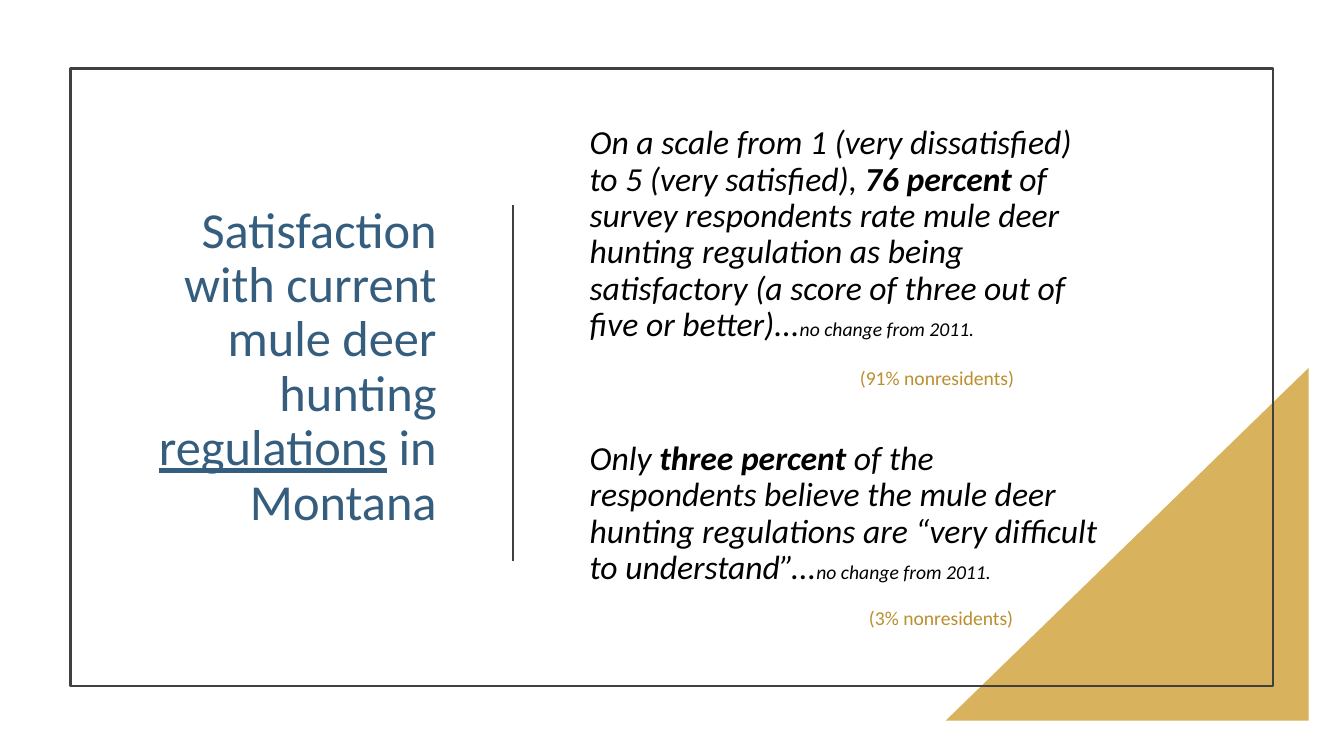
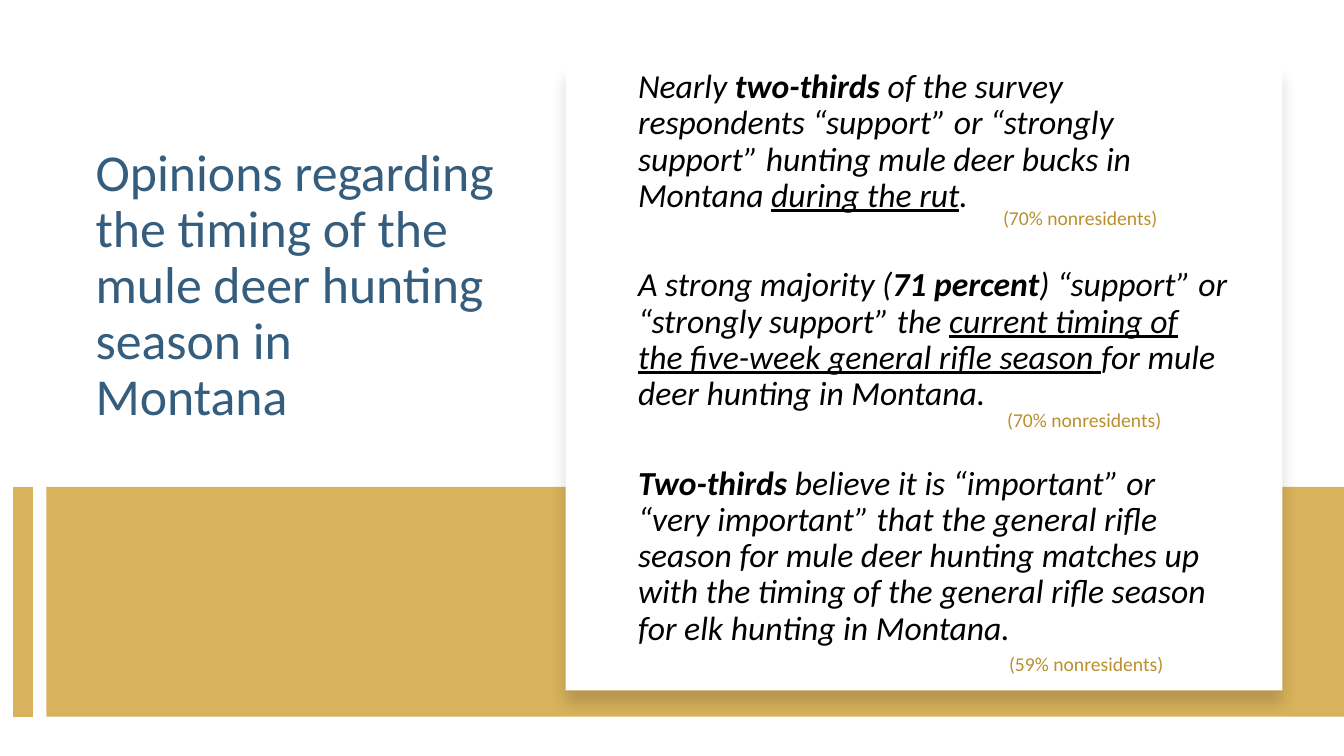
from lxml.etree import SubElement
from pptx import Presentation
from pptx.dml.color import RGBColor
from pptx.enum.shapes import MSO_CONNECTOR, MSO_SHAPE
from pptx.enum.text import MSO_ANCHOR, PP_ALIGN
from pptx.oxml.ns import qn
from pptx.util import Emu, Pt

PX = 9144  # 100 px to the inch
FONT = "Calibri"
BLUE, GOLD, DARK_GOLD = "355D7E", "D8B25C", "BA8F2D"
GREY, BLACK, WHITE = "404040", "000000", "FFFFFF"
BOLD, UNDERLINE, SMALL = {"bold": True}, {"underline": True}, {"size": 14}


def px(length):
    return Emu(length * PX)


def color(hex_text):
    return RGBColor.from_string(hex_text)


def add_text(page, area, paragraphs, size=24, ink=BLACK, italic=False,
             align=PP_ALIGN.LEFT, anchor=MSO_ANCHOR.TOP, spacing=0.9, gap=0):
    """Each paragraph is a list of plain strings and (string, format) spans."""
    frame = page.shapes.add_textbox(*map(px, area)).text_frame
    frame.word_wrap = True
    frame.vertical_anchor = anchor
    for index, spans in enumerate(paragraphs):
        para = frame.paragraphs[0] if index == 0 else frame.add_paragraph()
        para.alignment = align
        para.line_spacing = spacing
        if index < len(paragraphs) - 1:
            para.space_after = Pt(gap)
        for span in spans:
            text, style = (span, {}) if isinstance(span, str) else span
            run = para.add_run()
            run.text = text
            run.font.name = FONT
            run.font.size = Pt(style.get("size", size))
            run.font.color.rgb = color(ink)
            run.font.italic = italic
            run.font.bold = style.get("bold", False)
            run.font.underline = style.get("underline", False)


def add_title(page, area, spans, **style):
    add_text(page, area, [spans], ink=BLUE, **style)


def add_findings(page, area, paragraphs, gap):
    add_text(page, area, paragraphs, italic=True, gap=gap)


def add_nonresidents(page, left, top, percent):
    add_text(page, (left, top, 207, 34), [[f"({percent}% nonresidents)"]],
             size=14, ink=DARK_GOLD, spacing=1.0)


def add_panel(page, kind, area, fill=None, line=None):
    panel = page.shapes.add_shape(kind, *map(px, area))
    panel.shadow.inherit = False
    if fill:
        panel.fill.solid()
        panel.fill.fore_color.rgb = color(fill)
    else:
        panel.fill.background()
    if line:
        panel.line.color.rgb = color(line)
        panel.line.width = Pt(1.5)
    else:
        panel.line.fill.background()
    return panel


def add_vertical_line(page, x, top, bottom, ink, width):
    line = page.shapes.add_connector(MSO_CONNECTOR.STRAIGHT, px(x), px(top), px(x), px(bottom))
    line.line.color.rgb = color(ink)
    line.line.width = Pt(width)
    SubElement(line.element.spPr, qn("a:effectLst"))


def add_soft_shadow(panel):
    effects = panel.element.spPr.find(qn("a:effectLst"))
    shadow = SubElement(effects, qn("a:outerShdw"), blurRad=str(Pt(11)), dist=str(Pt(10)),
                        dir="5400000", algn="t", rotWithShape="0")
    ink = SubElement(shadow, qn("a:srgbClr"), val=BLACK)
    SubElement(ink, qn("a:alpha"), val="15000")


def build_regulations(page):
    triangle = add_panel(page, MSO_SHAPE.RIGHT_TRIANGLE, (938, 365, 360, 350), fill=GOLD)
    triangle.element.spPr.get_or_add_xfrm().set("flipH", "1")
    add_panel(page, MSO_SHAPE.RECTANGLE, (70, 68, 1193, 613), line=GREY)
    add_title(page, (116, 120, 327, 490),
              ["Satisfaction with current mule deer hunting ", ("regulations", UNDERLINE),
               " in Montana"],
              size=36, align=PP_ALIGN.RIGHT, anchor=MSO_ANCHOR.MIDDLE)
    add_vertical_line(page, 509, 203, 557, GREY, 1.5)
    no_change = ("no change from 2011.", SMALL)
    add_findings(page, (575, 120, 527, 470), [
        ["On a scale from 1 (very dissatisfied) to 5 (very satisfied), ",
         ("76 percent ", BOLD),
         "of survey respondents rate mule deer hunting regulation as being satisfactory "
         "(a score of three out of five or better)...", no_change],
        ["Only ", ("three percent ", BOLD),
         "of the respondents believe the mule deer hunting regulations are "
         "“very difficult to understand”...", no_change],
    ], gap=70)
    add_nonresidents(page, 843, 358, 91)
    add_nonresidents(page, 852, 596, 3)


def build_timing(page):
    add_title(page, (85, 141, 415, 294),
              ["Opinions regarding the timing of the mule deer hunting season in Montana"],
              size=37)
    band_top, band_height = 483, 228
    add_panel(page, MSO_SHAPE.RECTANGLE, (46, band_top, 1287, band_height), fill=GOLD)
    add_vertical_line(page, 23, band_top, band_top + band_height, GOLD, 14)
    card = add_panel(page, MSO_SHAPE.RECTANGLE, (561, 64, 711, 621), fill=WHITE)
    add_soft_shadow(card)
    add_findings(page, (623, 64, 606, 590), [
        ["Nearly ", ("two-thirds", BOLD),
         " of the survey respondents “support” or “strongly support” hunting mule deer "
         "bucks in Montana ", ("during the rut", UNDERLINE), "."],
        ["A strong majority (", ("71 percent", BOLD),
         ") “support” or “strongly support” the ",
         ("current timing of the five-week general rifle season ", UNDERLINE),
         "for mule deer hunting in Montana."],
        [("Two-thirds", BOLD),
         " believe it is “important” or “very important” that the general rifle season "
         "for mule deer hunting matches up with the timing of the general rifle season "
         "for elk hunting in Montana."],
    ], gap=38)
    for left, top, percent in ((985, 199, 70), (989, 400, 70), (991, 642, 59)):
        add_nonresidents(page, left, top, percent)


def main():
    deck = Presentation()
    deck.slide_width, deck.slide_height = px(1333), px(750)
    for build in (build_regulations, build_timing):
        build(deck.slides.add_slide(deck.slide_layouts[6]))
    deck.save("out.pptx")


if __name__ == "__main__":
    main()
